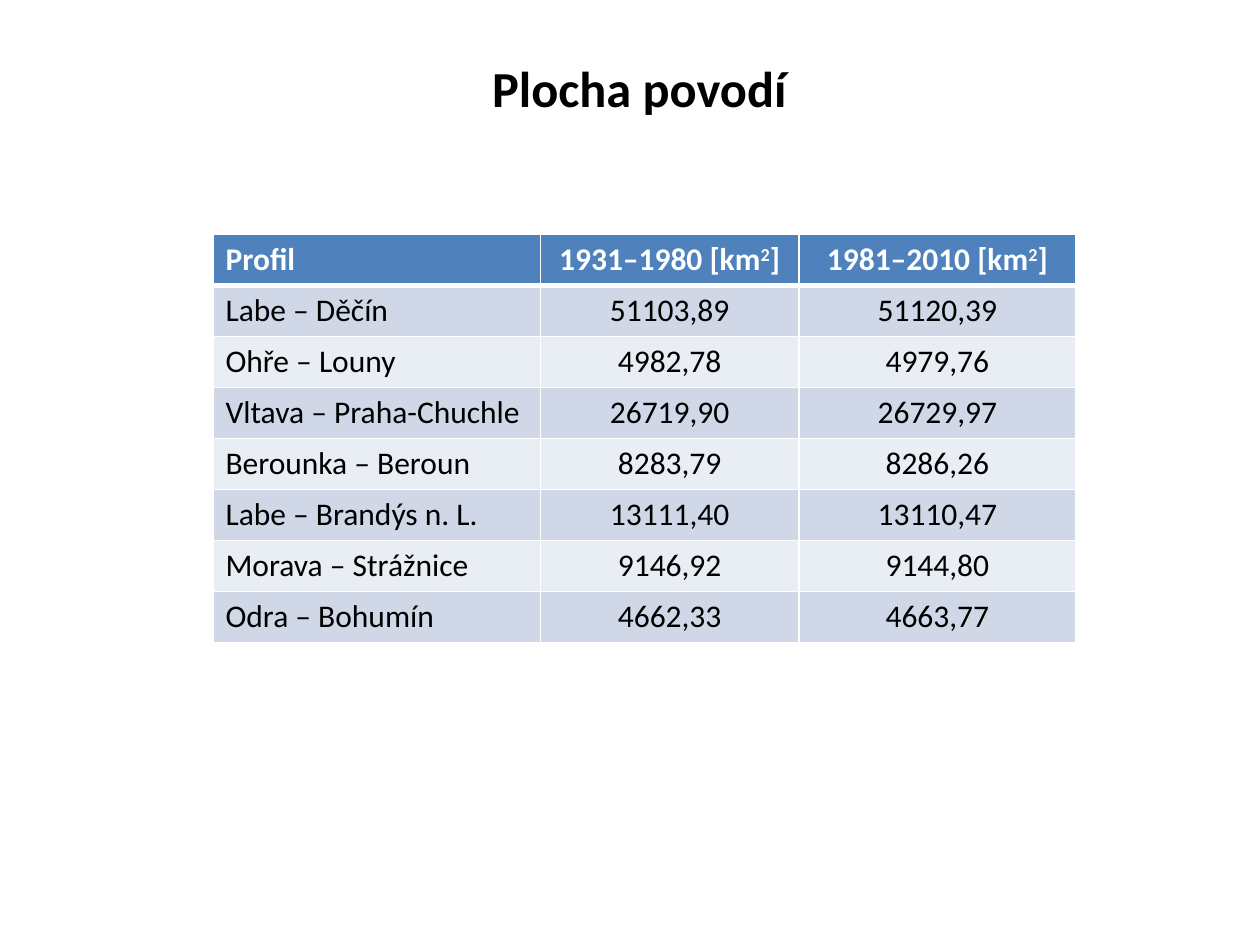
from lxml.etree import SubElement
from pptx import Presentation
from pptx.dml.color import RGBColor
from pptx.enum.text import MSO_ANCHOR, PP_ALIGN
from pptx.oxml.ns import qn
from pptx.util import Inches, Pt

HEADERS = ["Profil", "1931–1980 [km²]", "1981–2010 [km²]"]
CATCHMENTS = [
    ["Labe – Děčín", "51103,89", "51120,39"],
    ["Ohře – Louny", "4982,78", "4979,76"],
    ["Vltava – Praha-Chuchle", "26719,90", "26729,97"],
    ["Berounka – Beroun", "8283,79", "8286,26"],
    ["Labe – Brandýs n. L.", "13111,40", "13110,47"],
    ["Morava – Strážnice", "9146,92", "9144,80"],
    ["Odra – Bohumín", "4662,33", "4663,77"],
]
COLUMN_WIDTHS = [2.6, 2.05, 2.2]


def color(value):
    """Turn a hex string into a colour."""
    return RGBColor.from_string(value)


class SlideBuilder:
    """Hold the style and the current slide."""

    font_name = "Calibri"
    black, white = "000000", "FFFFFF"
    header_fill = "4F81BD"
    band_fills = ["D0D8E8", "E9EDF4"]

    def __init__(self, slide):
        """Start building on the given slide."""
        self.slide = slide

    def set_text(self, paragraph, text, size, hue, bold, alignment):
        """Fill a paragraph, raising each ² as a superscript 2."""
        paragraph.alignment = alignment
        font = paragraph.font
        font.name, font.size, font.bold = self.font_name, Pt(size), bold
        font.color.rgb = color(hue)
        before, square, after = text.partition("²")
        paragraph.add_run().text = before
        if square:
            superscript = paragraph.add_run()
            superscript.text = "2"
            superscript._r.get_or_add_rPr().set("baseline", "30000")
            paragraph.add_run().text = after

    def title(self, text, left, top, width, height):
        """Add the centred slide title."""
        shape = self.slide.shapes.add_textbox(
            Inches(left), Inches(top), Inches(width), Inches(height))
        frame = shape.text_frame
        frame.word_wrap = True
        frame.vertical_anchor = MSO_ANCHOR.MIDDLE
        self.set_text(frame.paragraphs[0], text, 28.8, self.black, True, PP_ALIGN.CENTER)

    def borders(self, cell, bottom_width):
        """Draw white lines around a cell."""
        properties = cell._tc.get_or_add_tcPr()
        widths = {"a:lnL": 1, "a:lnR": 1, "a:lnT": 1, "a:lnB": bottom_width}
        for tag, width in widths.items():
            line = SubElement(properties, qn(tag), w=str(Pt(width)))
            fill = SubElement(line, qn("a:solidFill"))
            SubElement(fill, qn("a:srgbClr"), val=self.white)

    def table(self, rows, column_widths, left, top, height):
        """Add a banded table with a header row."""
        table = self.slide.shapes.add_table(
            len(rows), len(column_widths), Inches(left), Inches(top),
            Inches(sum(column_widths)), Inches(height)).table
        for column, width in zip(table.columns, column_widths):
            column.width = Inches(width)
        for row_index, row in enumerate(rows):
            header = row_index == 0
            fill = self.header_fill if header else self.band_fills[(row_index - 1) % 2]
            hue = self.white if header else self.black
            for column_index, text in enumerate(row):
                cell = table.cell(row_index, column_index)
                self.borders(cell, 3 if header else 1)
                cell.fill.solid()
                cell.fill.fore_color.rgb = color(fill)
                alignment = PP_ALIGN.CENTER if column_index else PP_ALIGN.LEFT
                self.set_text(cell.text_frame.paragraphs[0], text, 18, hue, header, alignment)


def main():
    """Build and save the presentation."""
    presentation = Presentation()
    presentation.slide_width, presentation.slide_height = Inches(10), Inches(7.5)
    builder = SlideBuilder(presentation.slides.add_slide(presentation.slide_layouts[6]))
    builder.title("Plocha povodí", 1.14, 0.39, 7.87, 0.6)
    builder.table([HEADERS] + CATCHMENTS, COLUMN_WIDTHS, 1.69, 1.86, 3.24)
    presentation.save("out.pptx")


if __name__ == "__main__":
    main()
